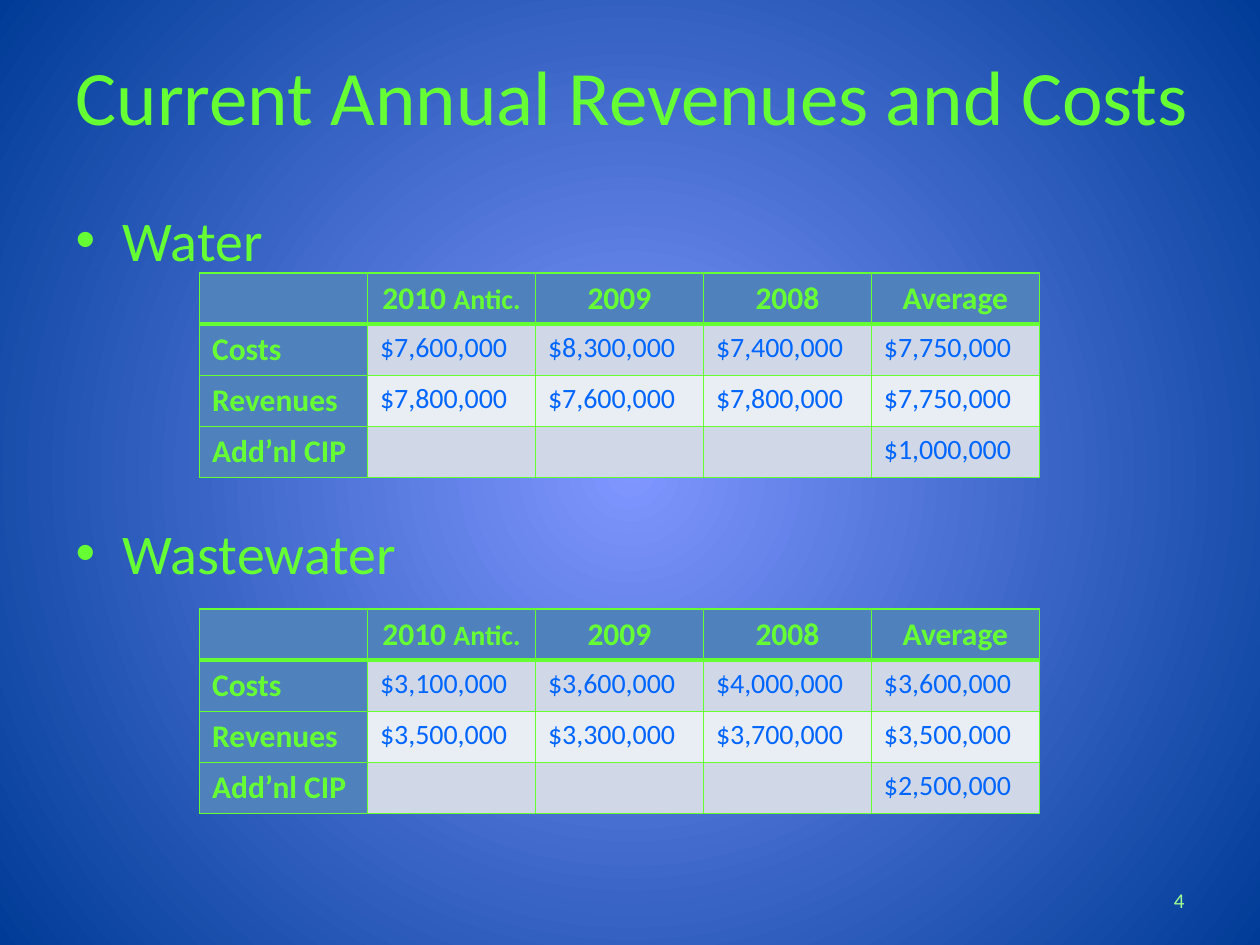
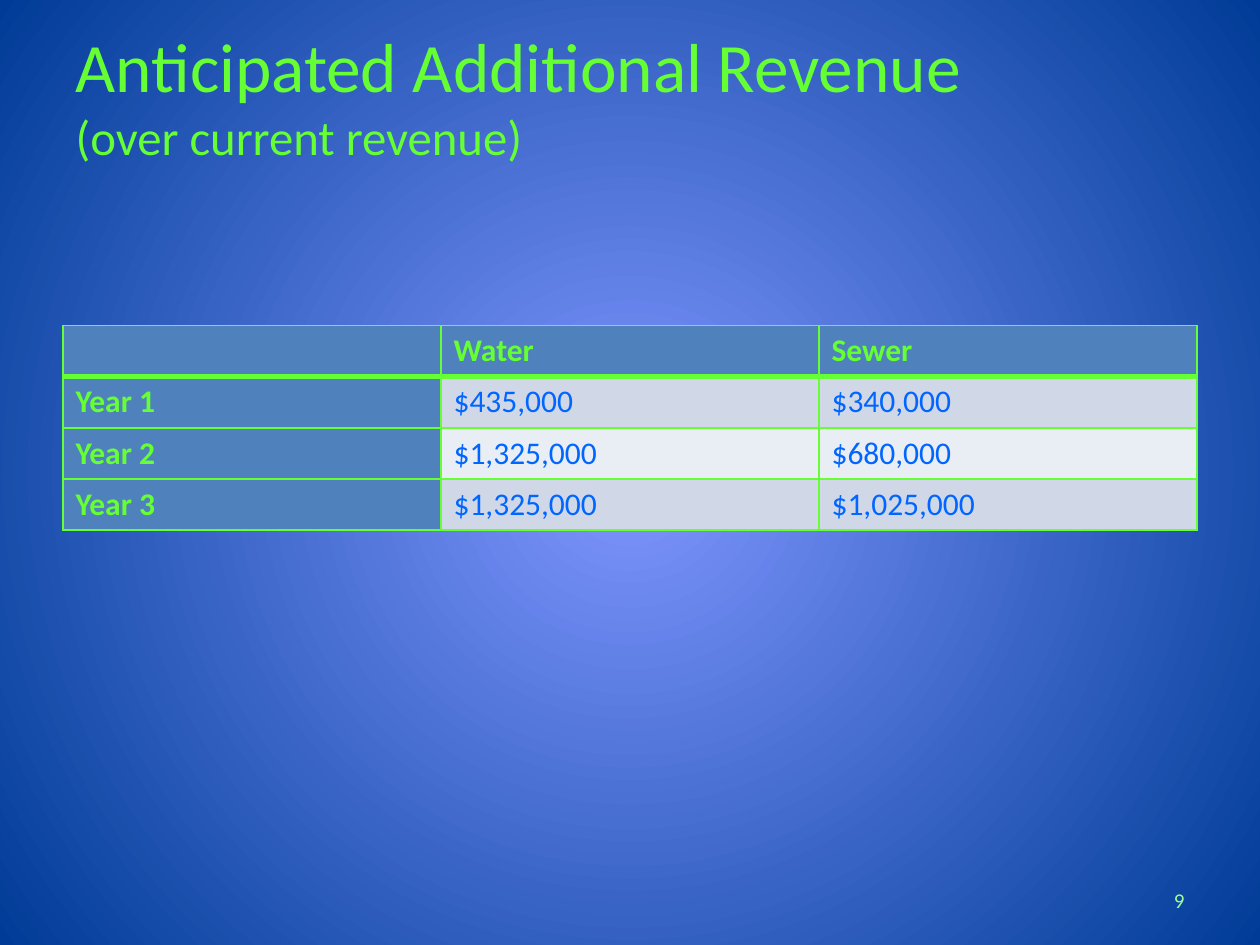
from dataclasses import dataclass

from lxml.etree import SubElement
from pptx import Presentation
from pptx.dml.color import RGBColor
from pptx.enum.text import MSO_ANCHOR, MSO_AUTO_SIZE, PP_ALIGN
from pptx.oxml import parse_xml
from pptx.oxml.ns import nsdecls, qn
from pptx.util import Pt

EMU_PER_PX = 9525
TITLE_ONLY_LAYOUT, TITLE_AND_BODY_LAYOUT = 5, 1


@dataclass(frozen=True)
class Theme:
    font: str = "Calibri"
    glow: str = "7F96FF"
    edge: str = "003C97"
    bright: str = "66FF33"
    page_number: str = "A0FF90"
    figure: str = "0066FF"
    label_fill: str = "4F81BD"
    band_fills: tuple = ("D0D8E8", "E9EDF4")
    title_size: float = 44
    long_title_size: float = 39.6
    subtitle_size: float = 27.9
    bullet_size: float = 32
    label_size: float = 18
    small_size: float = 16
    number_size: float = 12
    border: float = 1
    header_border: float = 3


THEME = Theme()


def px(length):
    return length * EMU_PER_PX


def color(hex_code):
    return RGBColor.from_string(hex_code)


def place(shape, left, top, width, height):
    shape.left, shape.top = px(left), px(top)
    shape.width, shape.height = px(width), px(height)


def format_run(run, size, hex_code=THEME.bright, bold=False):
    run.font.name = THEME.font
    run.font.size = Pt(size)
    run.font.bold = bold
    run.font.color.rgb = color(hex_code)


def paint_background(master):
    """Give every slide a glow that fades from the centre to the edges."""
    fill = master.background.fill
    fill.gradient()
    for stop, hex_code, position in zip(fill.gradient_stops, (THEME.glow, THEME.edge), (0, 1)):
        stop.color.rgb = color(hex_code)
        stop.position = position
    gradient = master.element.find(".//" + qn("p:bgPr")).find(qn("a:gradFill"))
    linear = gradient.find(qn("a:lin"))
    circle = parse_xml(
        f'<a:path {nsdecls("a")} path="circle">'
        '<a:fillToRect l="50000" t="50000" r="50000" b="50000"/></a:path>'
    )
    gradient.replace(linear, circle)


def write_title(page, text, sizes, width=864):
    """Write the title; each of its lines takes the next of the sizes."""
    title = page.shapes.title
    place(title, 48, 8, width, 128)
    frame = title.text_frame
    frame.text = text
    frame.auto_size = MSO_AUTO_SIZE.NONE
    frame.vertical_anchor = MSO_ANCHOR.MIDDLE
    para = frame.paragraphs[0]
    para.alignment = PP_ALIGN.LEFT
    for run, size in zip(para.runs, sizes):
        format_run(run, size)
    for line_break in para._p.findall(qn("a:br")):
        SubElement(line_break, qn("a:rPr"), sz=str(round(sizes[0] * 100)))


def write_bullets(page, bullets, gap):
    body = page.placeholders[1]
    place(body, 48, 152, 864, 492)
    frame = body.text_frame
    frame.text = "\n".join(bullets)
    frame.auto_size = MSO_AUTO_SIZE.NONE
    for index, para in enumerate(frame.paragraphs):
        para.space_before = Pt(gap if index else 0)
        format_run(para.runs[0], THEME.bullet_size)


def write_page_number(page, number):
    box = page.shapes.add_textbox(px(688), px(667), px(224), px(38))
    frame = box.text_frame
    frame.word_wrap = True
    frame.vertical_anchor = MSO_ANCHOR.MIDDLE
    frame.text = str(number)
    para = frame.paragraphs[0]
    para.alignment = PP_ALIGN.RIGHT
    format_run(para.runs[0], THEME.number_size, THEME.page_number)


def draw_borders(cell, top, bottom):
    widths = {"lnL": THEME.border, "lnR": THEME.border, "lnT": top, "lnB": bottom}
    properties = cell._tc.get_or_add_tcPr()
    for index, (side, width) in enumerate(widths.items()):
        line = parse_xml(
            f'<a:{side} {nsdecls("a")} w="{Pt(width)}"><a:solidFill>'
            f'<a:srgbClr val="{THEME.bright}"/></a:solidFill></a:{side}>'
        )
        properties.insert(index, line)


def write_cell(cell, content, size, hex_code, bold):
    """Write a text, or a text followed by a smaller note when given a pair."""
    parts = content if isinstance(content, tuple) else (content,)
    para = cell.text_frame.paragraphs[0]
    for part, part_size in zip(parts, (size, THEME.small_size)):
        if part:
            run = para.add_run()
            run.text = part
            format_run(run, part_size, hex_code, bold)


def add_money_table(page, rows, left, top, column_width, figure_size, header_align):
    row_count, column_count = len(rows), len(rows[0])
    row_height = 39
    table = page.shapes.add_table(
        row_count, column_count, px(left), px(top),
        px(column_width * column_count), px(row_height * row_count),
    ).table
    for column in table.columns:
        column.width = px(column_width)
    for row_index, values in enumerate(rows):
        table.rows[row_index].height = px(row_height)
        for column_index, content in enumerate(values):
            cell = table.cell(row_index, column_index)
            is_header = row_index == 0
            cell.fill.solid()
            if is_header or column_index == 0:
                cell.fill.fore_color.rgb = color(THEME.label_fill)
                write_cell(cell, content, THEME.label_size, THEME.bright, True)
            else:
                cell.fill.fore_color.rgb = color(THEME.band_fills[(row_index - 1) % 2])
                write_cell(cell, content, figure_size, THEME.figure, False)
            if is_header:
                cell.text_frame.paragraphs[0].alignment = header_align
            draw_borders(
                cell,
                top=THEME.header_border if row_index == 1 else THEME.border,
                bottom=THEME.header_border if is_header else THEME.border,
            )


def add_service_table(page, top, costs, revenues, extra):
    rows = [
        ("", ("2010 ", "Antic."), "2009", "2008", "Average"),
        ("Costs", *costs),
        ("Revenues", *revenues),
        ("Add’nl CIP", "", "", "", extra),
    ]
    add_money_table(page, rows, 152, top, 128, THEME.small_size, PP_ALIGN.CENTER)


def build_current_revenues(deck):
    page = deck.slides.add_slide(deck.slide_layouts[TITLE_AND_BODY_LAYOUT])
    write_title(page, "Current Annual Revenues and Costs", [THEME.title_size], width=880)
    write_bullets(page, ["Water", "Wastewater"], gap=140)
    add_service_table(
        page, 208,
        costs=("$7,600,000", "$8,300,000", "$7,400,000", "$7,750,000"),
        revenues=("$7,800,000", "$7,600,000", "$7,800,000", "$7,750,000"),
        extra="$1,000,000",
    )
    add_service_table(
        page, 464,
        costs=("$3,100,000", "$3,600,000", "$4,000,000", "$3,600,000"),
        revenues=("$3,500,000", "$3,300,000", "$3,700,000", "$3,500,000"),
        extra="$2,500,000",
    )
    write_page_number(page, 4)


def build_additional_revenue(deck):
    page = deck.slides.add_slide(deck.slide_layouts[TITLE_ONLY_LAYOUT])
    write_title(
        page, "Anticipated Additional Revenue\v(over current revenue)",
        [THEME.long_title_size, THEME.subtitle_size],
    )
    rows = [
        ("", "Water", "Sewer"),
        ("Year 1", "$435,000", "$340,000"),
        ("Year 2", "$1,325,000", "$680,000"),
        ("Year 3", "$1,325,000", "$1,025,000"),
    ]
    add_money_table(page, rows, 48, 248, 288, THEME.label_size, PP_ALIGN.LEFT)
    write_page_number(page, 9)


def main():
    deck = Presentation()
    deck.slide_width, deck.slide_height = px(960), px(720)
    paint_background(deck.slide_master)
    build_current_revenues(deck)
    build_additional_revenue(deck)
    deck.save("out.pptx")


if __name__ == "__main__":
    main()
